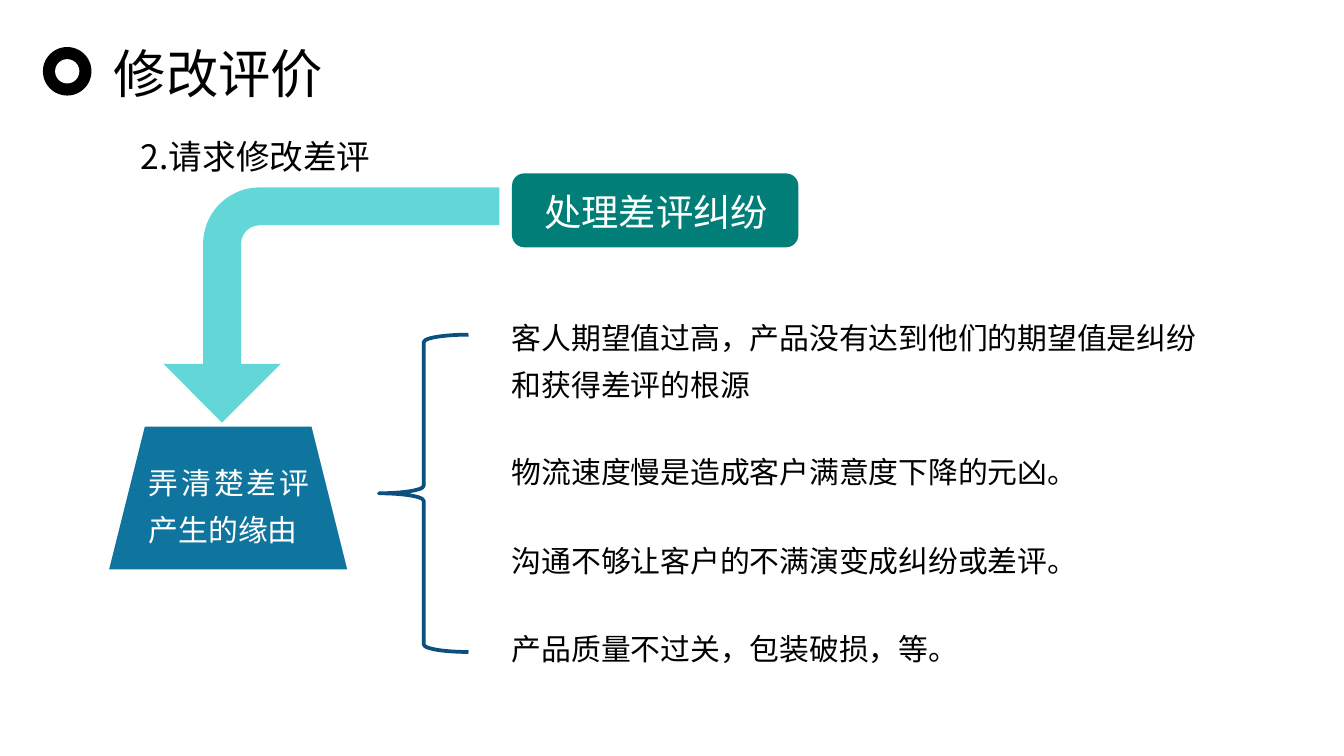
from dataclasses import dataclass
from typing import Optional

from lxml.etree import SubElement
from pptx import Presentation
from pptx.dml.color import RGBColor
from pptx.enum.shapes import MSO_SHAPE
from pptx.enum.text import MSO_AUTO_SIZE, PP_ALIGN
from pptx.oxml.ns import qn
from pptx.util import Pt

FONT = "Noto Sans CJK SC"
COLORS = {
    "black": "000000",
    "white": "FFFFFF",
    "blue": "0F749E",
    "green": "017E77",
    "aqua": "04C0BF",
    "navy": "0B4F7E",
}


@dataclass
class Shape:
    kind: MSO_SHAPE
    left: float
    top: float
    width: float
    height: float
    fill: Optional[str] = None
    line: Optional[str] = None


@dataclass
class Label:
    text: str
    left: float
    top: float
    width: float
    height: float
    size: float = 16
    color: str = "black"
    spacing: float = 1.3
    align: PP_ALIGN = PP_ALIGN.LEFT
    wrap: bool = True


def rgb(name: str) -> RGBColor:
    return RGBColor.from_string(COLORS[name])


def draw_shape(s, item: Shape):
    sp = s.shapes.add_shape(item.kind, Pt(item.left), Pt(item.top),
                            Pt(item.width), Pt(item.height))
    sp.shadow.inherit = False
    if item.fill:
        sp.fill.solid()
        sp.fill.fore_color.rgb = rgb(item.fill)
    else:
        sp.fill.background()
    if item.line:
        sp.line.color.rgb = rgb(item.line)
        sp.line.width = Pt(2)
    else:
        sp.line.fill.background()
    return sp


def draw_label(s, item: Label) -> None:
    sp = s.shapes.add_textbox(Pt(item.left), Pt(item.top),
                              Pt(item.width), Pt(item.height))
    tf = sp.text_frame
    tf.word_wrap = item.wrap
    tf.auto_size = MSO_AUTO_SIZE.SHAPE_TO_FIT_TEXT
    p = tf.paragraphs[0]
    p.alignment = item.align
    p.line_spacing = item.spacing
    r = p.add_run()
    r.text = item.text
    r.font.size = Pt(item.size)
    r.font.color.rgb = rgb(item.color)
    r.font.name = FONT
    SubElement(r.font._element, qn("a:ea")).set("typeface", FONT)


def draw_bent_arrow(s, item: Shape) -> None:
    sp = draw_shape(s, item)
    for i, value in enumerate((0.161, 0.25, 0.25, 0.24)):
        sp.adjustments[i] = value
    sp.rotation = 270
    spPr = sp._element.spPr
    spPr.find(qn("a:xfrm")).set("flipH", "1")
    color = spPr.find(qn("a:solidFill")).find(qn("a:srgbClr"))
    SubElement(color, qn("a:alpha")).set("val", "62000")


SHAPES = [
    Shape(MSO_SHAPE.OVAL, 23, 25.2, 26, 26, "black"),
    Shape(MSO_SHAPE.OVAL, 29.5, 31.7, 13, 13, "white"),
    Shape(MSO_SHAPE.TRAPEZOID, 58.5, 228.5, 127.5, 76.5, "blue"),
    Shape(MSO_SHAPE.ROUNDED_RECTANGLE, 274.3, 92.9, 153.4, 39.6, "green"),
    Shape(MSO_SHAPE.LEFT_BRACE, 203, 179.3, 48, 170, line="navy"),
]
ARROW = Shape(MSO_SHAPE.BENT_ARROW, 114.5, 73.4, 126, 180, "aqua")

LABELS = [
    Label("修改评价", 54, 18.7, 126.7, 41, 28, spacing=1, wrap=False),
    Label("2.请求修改差评", 68.4, 69.1, 416, 29, 18, spacing=1),
    Label("弄清楚差评产生的缘由", 72.7, 239.8, 100, 57.6,
          color="white", align=PP_ALIGN.JUSTIFY),
    Label("处理差评纠纷", 284.4, 90.7, 134.6, 39, 20, "white"),
    Label("客人期望值过高，产品没有达到他们的期望值是纠纷和获得差评的根源",
          267.1, 162, 389.5, 57.6),
]
CAUSES = [
    "物流速度慢是造成客户满意度下降的元凶。",
    "沟通不够让客户的不满演变成纠纷或差评。",
    "产品质量不过关，包装破损，等。",
]


def main() -> None:
    prs = Presentation()
    prs.slide_width, prs.slide_height = Pt(720), Pt(405)
    s = prs.slides.add_slide(prs.slide_layouts[6])
    for item in SHAPES:
        draw_shape(s, item)
    draw_bent_arrow(s, ARROW)
    for item in LABELS:
        draw_label(s, item)
    for i, text in enumerate(CAUSES):
        draw_label(s, Label(text, 267.1, 234 + 47.3 * i, 312.5, 32.4))
    prs.save("out.pptx")


if __name__ == "__main__":
    main()
